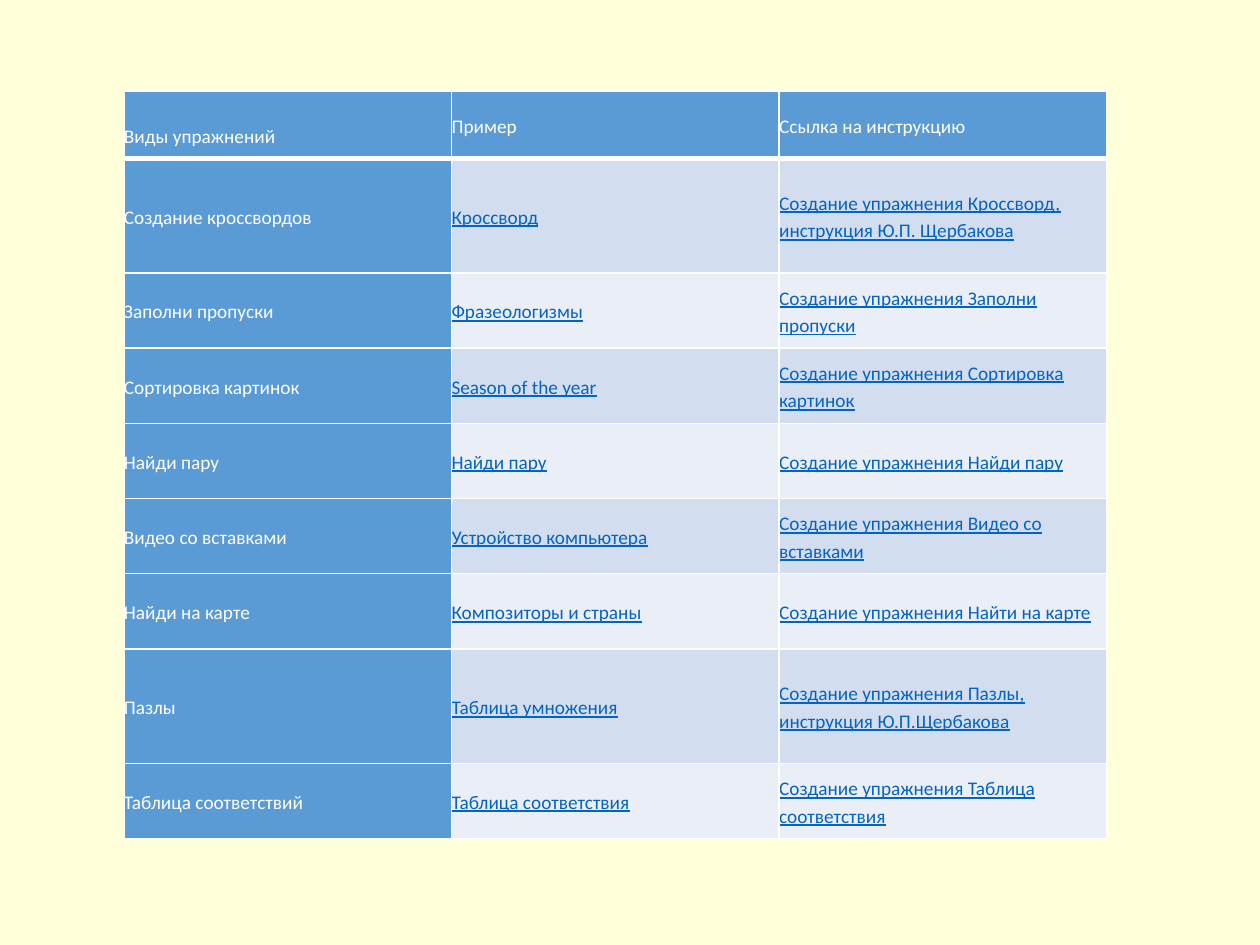
import pptx
import pptx.util
import pptx.dml.color
import pptx.enum.text
import pptx.oxml

Pt = pptx.util.Pt
NS = "http://schemas.openxmlformats.org/drawingml/2006/main"
WHITE, BLUE, LINK = "FFFFFF", "5B9BD5", "0563C1"
BANDS = ["D2DEEF", "EAEFF7"]
ROWS = [
    ("Виды упражнений", "Пример", "Ссылка на инструкцию"),
    ("Создание кроссвордов", "Кроссворд",
     "Создание упражнения Кроссворд, инструкция Ю.П. Щербакова"),
    ("Заполни пропуски", "Фразеологизмы", "Создание упражнения Заполни пропуски"),
    ("Сортировка картинок", "Season of the year",
     "Создание упражнения Сортировка картинок"),
    ("Найди пару", "Найди пару", "Создание упражнения Найди пару"),
    ("Видео со вставками", "Устройство компьютера",
     "Создание упражнения Видео со вставками"),
    ("Найди на карте", "Композиторы и страны", "Создание упражнения Найти на карте"),
    ("Пазлы", "Таблица умножения",
     "Создание упражнения Пазлы, инструкция Ю.П.Щербакова"),
    ("Таблица соответствий", "Таблица соответствия",
     "Создание упражнения Таблица соответствия"),
]
TALL = {0: 38.5, 1: 65.5, 7: 65.5}


def paint(fill, code):
    fill.solid()
    fill.fore_color.rgb = pptx.dml.color.RGBColor.from_string(code)


class Deck:
    font = "Calibri"
    size = 11

    def __init__(self, wide, high):
        self.file = pptx.Presentation()
        self.file.slide_width = Pt(wide)
        self.file.slide_height = Pt(high)

    def page(self, back):
        self.slide = self.file.slides.add_slide(self.file.slide_layouts[6])
        paint(self.slide.background.fill, back)

    def table(self, left, top, widths, heights):
        grid = self.slide.shapes.add_table(
            len(heights), len(widths), Pt(left), Pt(top),
            Pt(sum(widths)), Pt(sum(heights))).table
        grid.first_row = grid.horz_banding = False
        for col, width in zip(grid.columns, widths):
            col.width = Pt(width)
        for row, height in zip(grid.rows, heights):
            row.height = Pt(height)
        return grid

    def cell(self, cell, text, fill, link=False, pad=0, base=1):
        cell.margin_left = cell.margin_right = cell.margin_bottom = 0
        cell.margin_top = Pt(pad)
        cell.vertical_anchor = pptx.enum.text.MSO_ANCHOR.MIDDLE
        paint(cell.fill, fill)
        para = cell.text_frame.paragraphs[0]
        para.line_spacing = 1.15
        run = para.add_run()
        run.text = text
        run.font.name = self.font
        run.font.size = Pt(self.size)
        run.font.bold = False
        run.font.underline = link
        paint(run.font.fill, LINK if link else WHITE)
        self.edges(cell, base)

    def edges(self, cell, base):
        props = cell._tc.get_or_add_tcPr()
        for spot, side in enumerate("LRTB"):
            width = Pt(base if side == "B" else 1)
            props.insert(spot, pptx.oxml.parse_xml(
                f'<a:ln{side} xmlns:a="{NS}" w="{width}"><a:solidFill>'
                f'<a:srgbClr val="{WHITE}"/></a:solidFill></a:ln{side}>'))


def main():
    deck = Deck(720, 540)
    deck.page("FFFFD9")
    heights = [TALL.get(r, 43) for r in range(len(ROWS))]
    grid = deck.table(70.8, 52, [187.2] * 3, heights)
    for r, row in enumerate(ROWS):
        for c, text in enumerate(row):
            link = r > 0 and c > 0
            deck.cell(grid.cell(r, c), text,
                      BANDS[(r - 1) % 2] if link else BLUE, link,
                      pad=12.5 if r == c == 0 else 0,
                      base=3 if r == 0 else 1)
    deck.file.save("out.pptx")


if __name__ == "__main__":
    main()
